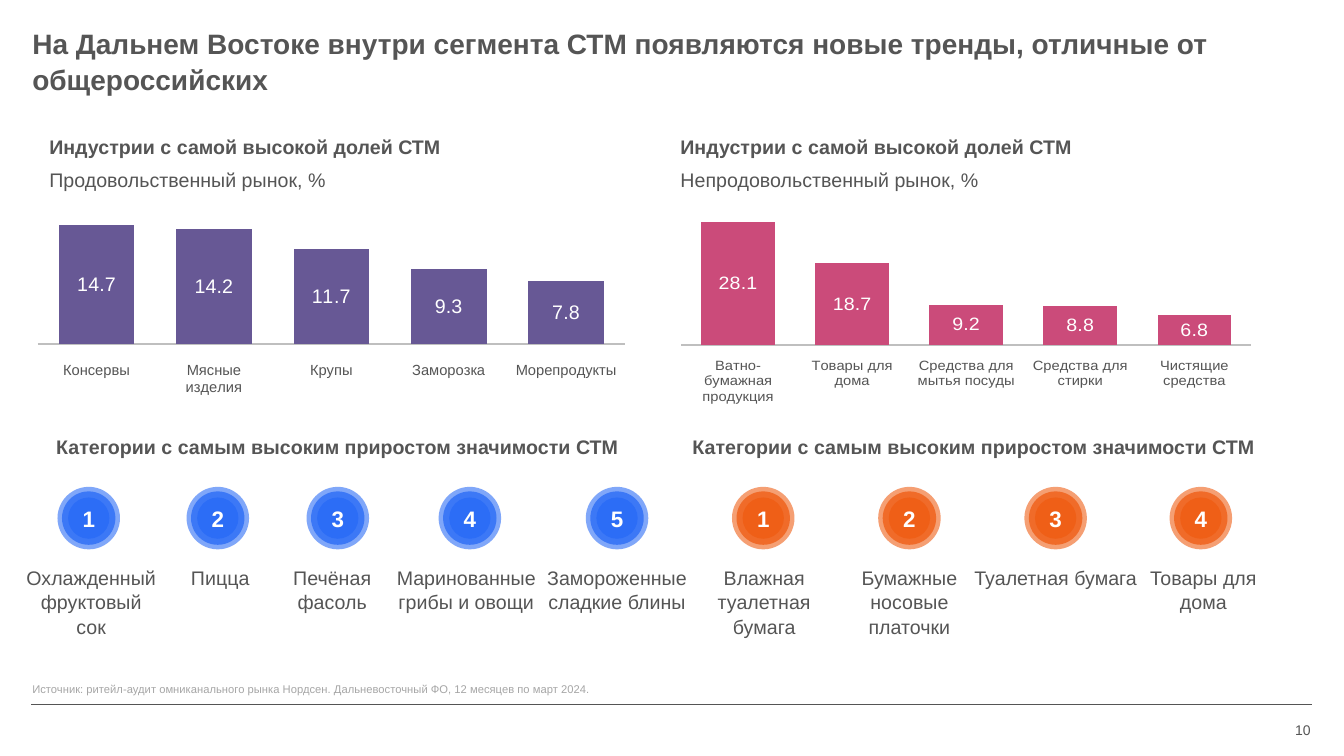
from lxml import etree
from pptx import Presentation
from pptx.chart.data import CategoryChartData
from pptx.dml.color import RGBColor
from pptx.enum.chart import XL_CHART_TYPE, XL_TICK_LABEL_POSITION, XL_TICK_MARK
from pptx.enum.shapes import MSO_CONNECTOR, MSO_SHAPE
from pptx.enum.text import MSO_ANCHOR, MSO_AUTO_SIZE, PP_ALIGN
from pptx.oxml.ns import qn
from pptx.util import Inches, Pt

COLUMN_STACKED = XL_CHART_TYPE.COLUMN_STACKED
LOW = XL_TICK_LABEL_POSITION.LOW
NO_TICK = XL_TICK_MARK.NONE
STRAIGHT = MSO_CONNECTOR.STRAIGHT
OVAL = MSO_SHAPE.OVAL
TOP, MIDDLE, BOTTOM = MSO_ANCHOR.TOP, MSO_ANCHOR.MIDDLE, MSO_ANCHOR.BOTTOM
LEFT, CENTER, RIGHT = PP_ALIGN.LEFT, PP_ALIGN.CENTER, PP_ALIGN.RIGHT

GRAY = RGBColor(0x55, 0x55, 0x55)
SOURCE_GRAY = RGBColor(0xA6, 0xA6, 0xA6)
AXIS_GRAY = RGBColor(0xBF, 0xBF, 0xBF)
WHITE = RGBColor(0xFF, 0xFF, 0xFF)
PURPLE = RGBColor(0x67, 0x58, 0x95)
PINK = RGBColor(0xCB, 0x4B, 0x7A)
BLUE = RGBColor(0x2C, 0x6D, 0xF6)
ORANGE = RGBColor(0xEF, 0x5F, 0x17)

FONT = "Arial"
LINE_SPACING = 1.05
# Diameter and opacity in percent, from the outer ring to the core
RINGS = [(0.62, 60), (0.53, 80), (0.41, 100)]

SHARE_TITLE = "Индустрии с самой высокой долей СТМ"
GROWTH_TITLE = "Категории с самым высоким приростом значимости СТМ"

# Boxes are left, top, width, height
MARKETS = [
    {
        "heading": ((0.39, 1.28, 4.95, 0.89), "Продовольственный рынок, %"),
        "chart": {
            "box": (0.34, 1.42, 6.02, 2.59), "color": PURPLE,
            "maximum": 24, "plot_height": 0.777,
            "shares": [("Консервы", 14.7), ("Мясные изделия", 14.2), ("Крупы", 11.7),
                       ("Заморозка", 9.3), ("Морепродукты", 7.8)],
        },
        "growth_box": (0.46, 4.25, 5.86, 0.89),
        "badge_color": BLUE,
        # Name, badge centre, label left, label width
        "leaders": [("Охлажденный фруктовый сок", 0.88, 0.25, 1.31),
                    ("Пицца", 2.16, 1.67, 1.03),
                    ("Печёная фасоль", 3.35, 2.65, 1.29),
                    ("Маринованные грибы и овощи", 4.66, 3.93, 1.39),
                    ("Замороженные сладкие блины", 6.12, 5.42, 1.4)],
    },
    {
        "heading": ((6.65, 1.28, 4.95, 0.89), "Непродовольственный рынок, %"),
        "chart": {
            "box": (6.72, 1.77, 5.85, 2.24), "color": PINK,
            "maximum": 37, "plot_height": 0.806,
            "shares": [("Ватно-бумажная продукция", 28.1), ("Товары для дома", 18.7),
                       ("Средства для мытья посуды", 9.2), ("Средства для стирки", 8.8),
                       ("Чистящие средства", 6.8)],
        },
        "growth_box": (6.77, 4.25, 6.06, 0.89),
        "badge_color": ORANGE,
        "leaders": [("Влажная туалетная бумага", 7.57, 7.1, 0.96),
                    ("Бумажные носовые платочки", 9.02, 8.46, 1.12),
                    ("Туалетная бумага", 10.47, 9.66, 1.62),
                    ("Товары для дома", 11.91, 11.28, 1.31)],
    },
]


def set_values(target, values):
    for name, value in values.items():
        setattr(target, name, value)


def style_font(font, size, color=GRAY, bold=False):
    set_values(font, {"name": FONT, "size": Pt(size), "bold": bold})
    font.color.rgb = color


def place(shape, box):
    set_values(shape, dict(zip(("left", "top", "width", "height"), map(Inches, box))))


def write(shape, lines, align=LEFT, anchor=TOP, side=0.0, after=0):
    """Each line is its text, size, colour and weight."""
    frame = shape.text_frame
    set_values(frame, {"word_wrap": True, "auto_size": MSO_AUTO_SIZE.NONE,
                       "vertical_anchor": anchor,
                       "margin_left": Inches(side), "margin_right": Inches(side),
                       "margin_top": Inches(0.05), "margin_bottom": Inches(0.05)})
    for index, (text, size, color, bold) in enumerate(lines):
        para = frame.add_paragraph() if index else frame.paragraphs[0]
        set_values(para, {"alignment": align, "line_spacing": LINE_SPACING,
                          "space_before": Pt(0), "space_after": Pt(after)})
        span = para.add_run()
        span.text = text
        style_font(span.font, size, color, bold)


def add_text(page, box, lines, **layout):
    shape = page.shapes.add_textbox(*map(Inches, box))
    write(shape, lines, **layout)


def add_share_chart(page, box, color, maximum, plot_height, shares):
    data = CategoryChartData(number_format="0.0")
    data.categories = [name for name, _ in shares]
    data.add_series("Доля СТМ", [share for _, share in shares])
    chart = page.shapes.add_chart(COLUMN_STACKED, *map(Inches, box), data).chart
    set_values(chart, {"has_legend": False, "has_title": False})
    style_font(chart.font, 10)

    # Axes
    set_values(chart.value_axis, {"minimum_scale": -1, "maximum_scale": maximum,
                                  "has_major_gridlines": False, "visible": False})
    axis = chart.category_axis
    set_values(axis, {"tick_label_position": LOW, "major_tick_mark": NO_TICK,
                      "minor_tick_mark": NO_TICK})
    style_font(axis.tick_labels.font, 10.5)
    axis.format.line.color.rgb = AXIS_GRAY
    axis.format.line.width = Pt(1)

    # Columns and their labels
    plot = chart.plots[0]
    set_values(plot, {"gap_width": 55, "overlap": 100, "vary_by_categories": False,
                      "has_data_labels": True})
    fill = plot.series[0].format.fill
    fill.solid()
    fill.fore_color.rgb = color
    labels = plot.data_labels
    set_values(labels, {"show_value": True, "number_format": "0.0",
                        "number_format_is_linked": False})
    style_font(labels.font, 14, WHITE)

    # Plot area within the chart
    area = chart.element.find(".//" + qn("c:plotArea"))
    for old_layout in area.findall(qn("c:layout")):
        area.remove(old_layout)
    layout = etree.Element(qn("c:layout"))
    manual = etree.SubElement(layout, qn("c:manualLayout"))
    for tag, value in [("layoutTarget", "inner"), ("xMode", "edge"), ("yMode", "edge"),
                       ("x", 0.006), ("y", 0.024), ("w", 0.967), ("h", plot_height)]:
        etree.SubElement(manual, qn("c:" + tag), val=str(value))
    area.insert(0, layout)


def add_badge(page, center_x, center_y, number, color):
    group = page.shapes.add_group_shape()
    for size, opacity in RINGS:
        box = (center_x - size / 2, center_y - size / 2, size, size)
        ring = group.shapes.add_shape(OVAL, *map(Inches, box))
        ring.shadow.inherit = False
        ring.line.fill.background()
        ring.fill.solid()
        ring.fill.fore_color.rgb = color
        if opacity < 100:
            tint = ring.fill._xPr.find(".//" + qn("a:srgbClr"))
            etree.SubElement(tint, qn("a:alpha"), val=str(opacity * 1000))
    write(ring, [(str(number), 16, WHITE, True)], align=CENTER, anchor=MIDDLE, side=0.05)


def add_market(page, market):
    # Shares of industries
    box, subtitle = market["heading"]
    add_text(page, box, [(SHARE_TITLE, 14, GRAY, True), (subtitle, 14, GRAY, False)],
             side=0.1, after=6)
    add_share_chart(page, **market["chart"])

    # Ranking of growing categories
    growth_box = market["growth_box"]
    add_text(page, growth_box, [(GROWTH_TITLE, 14, GRAY, True)], side=0.1)
    top = growth_box[1]
    for number, (name, center, left, width) in enumerate(market["leaders"], 1):
        add_text(page, (left, top + 1.3, width, 0.61), [(name, 14, GRAY, False)], align=CENTER)
        add_badge(page, center, top + 0.89, number, market["badge_color"])


def add_frame(page):
    # Title
    title = page.shapes.title
    place(title, (0.32, 0.2, 12.67, 0.43))
    write(title, [("На Дальнем Востоке внутри сегмента СТМ появляются новые тренды, "
                   "отличные от общероссийских", 20, GRAY, True)])

    # Source line
    source = page.placeholders[1]
    place(source, (0.32, 6.55, 12.67, 0.4))
    properties = source.text_frame.paragraphs[0]._p.get_or_add_pPr()
    set_bullet = {"marL": "0", "indent": "0"}
    for name, value in set_bullet.items():
        properties.set(name, value)
    etree.SubElement(properties, qn("a:buNone"))
    write(source, [("Источник: ритейл-аудит омниканального рынка Нордсен. "
                    "Дальневосточный ФО, 12 месяцев по март 2024.", 8, SOURCE_GRAY, False)],
          anchor=BOTTOM)

    # Footer rule and page number
    rule = page.shapes.add_connector(STRAIGHT, *map(Inches, (0.31, 6.99, 13.01, 6.99)))
    rule.line.color.rgb = GRAY
    rule.line.width = Pt(1)
    etree.SubElement(rule._element.spPr, qn("a:effectLst"))
    add_text(page, (12.01, 7.04, 0.99, 0.4), [("10", 10, GRAY, False)],
             align=RIGHT, anchor=MIDDLE)


def main():
    deck = Presentation()
    set_values(deck, {"slide_width": Inches(13.33), "slide_height": Inches(7.5)})
    page = deck.slides.add_slide(deck.slide_layouts[1])
    add_frame(page)
    for market in MARKETS:
        add_market(page, market)
    deck.save("out.pptx")


if __name__ == "__main__":
    main()
